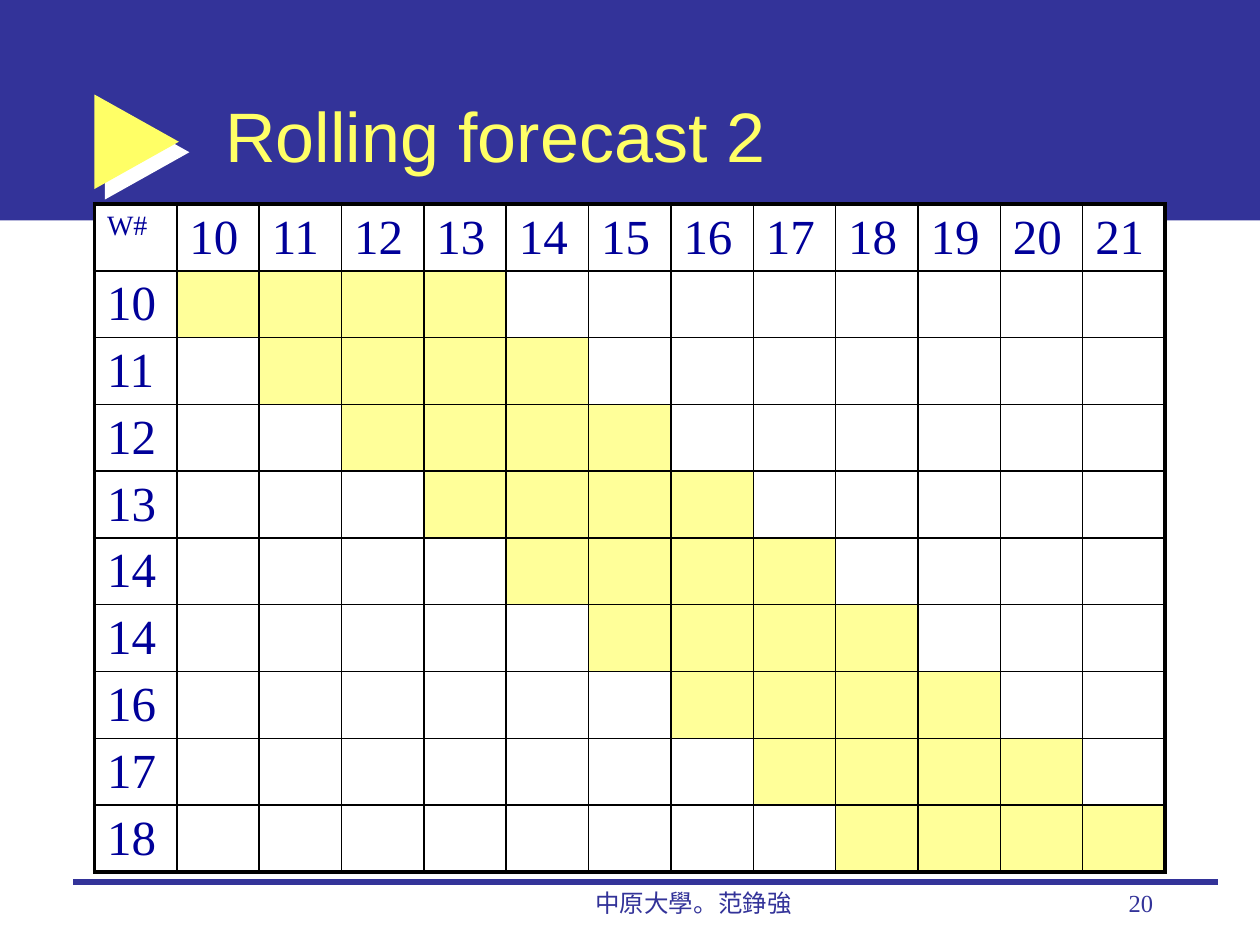
from lxml.etree import SubElement
from pptx import Presentation
from pptx.dml.color import RGBColor
from pptx.enum.shapes import MSO_CONNECTOR as CONNECTOR, MSO_SHAPE as SHAPE
from pptx.enum.text import MSO_ANCHOR as ANCHOR, PP_ALIGN as ALIGN
from pptx.oxml.ns import qn
from pptx.util import Inches, Pt

NAVY, INK, YELLOW, PALE = "333399", "000099", "FFFF66", "FFFF99"
WHITE, BLACK = "FFFFFF", "000000"

WEEKS = range(10, 22)
ROW_WEEKS = [10, 11, 12, 13, 14, 14, 16, 17, 18]
HORIZON = 4


def color(code):
    return RGBColor.from_string(code)


def write(frame, text, size, shade, font="Times New Roman", align=ALIGN.LEFT):
    para = frame.paragraphs[0]
    para.alignment = align
    span = para.add_run()
    span.text = text
    span.font.name = font
    span.font.size = Pt(size)
    span.font.color.rgb = color(shade)


def add_solid(parent, code):
    fill = SubElement(parent, qn("a:solidFill"))
    SubElement(fill, qn("a:srgbClr"), val=code)


def add_shadow(shape, code, distance, degrees):
    """Give the shape a hard-edged, opaque offset shadow."""
    effects = shape._element.spPr.find(qn("a:effectLst"))
    shadow = SubElement(effects, qn("a:outerShdw"), blurRad="0", dist=str(Pt(distance)),
                        dir=str(degrees * 60000), algn="ctr", rotWithShape="0")
    SubElement(shadow, qn("a:srgbClr"), val=code)


def add_borders(cell, widths):
    """Draw black borders; widths maps the sides L, R, T, B to points."""
    properties = cell._tc.get_or_add_tcPr()
    for side in "LRTB":
        line = SubElement(properties, qn(f"a:ln{side}"), w=str(Pt(widths[side])))
        add_solid(line, BLACK)


class SlideBuilder:
    def __init__(self, page):
        self.page = page

    def shape(self, kind, left, top, width, height, fill):
        shape = self.page.shapes.add_shape(
            kind, Inches(left), Inches(top), Inches(width), Inches(height))
        shape.shadow.inherit = False
        shape.fill.solid()
        shape.fill.fore_color.rgb = color(fill)
        shape.line.fill.background()
        return shape

    def line(self, left, right, y, shade, width):
        line = self.page.shapes.add_connector(
            CONNECTOR.STRAIGHT, Inches(left), Inches(y), Inches(right), Inches(y))
        line.line.color.rgb = color(shade)
        line.line.width = Pt(width)
        SubElement(line._element.spPr, qn("a:effectLst"))

    def text(self, left, top, width, height, text, anchor=ANCHOR.TOP, **style):
        box = self.page.shapes.add_textbox(
            Inches(left), Inches(top), Inches(width), Inches(height))
        box.text_frame.word_wrap = True
        box.text_frame.vertical_anchor = anchor
        write(box.text_frame, text, **style)

    def forecast_table(self, left, top, width, row_height):
        """Each row shades its own week and the weeks up to the horizon."""
        rows, columns = len(ROW_WEEKS) + 1, len(WEEKS) + 1
        table = self.page.shapes.add_table(
            rows, columns, Inches(left), Inches(top),
            Inches(width), Inches(row_height * rows)).table
        table.first_row = table.horz_banding = False
        for column in table.columns:
            column.width = Inches(width / columns)
        for row in range(rows):
            for column in range(columns):
                cell = table.cell(row, column)
                cell.margin_bottom = 0
                edges = {"L": column == 0, "R": column == columns - 1,
                         "T": row == 0, "B": row == rows - 1}
                add_borders(cell, {side: 2.25 if outer else 1
                                   for side, outer in edges.items()})
                shaded = 0 < row <= column < row + HORIZON
                cell.fill.solid()
                cell.fill.fore_color.rgb = color(PALE if shaded else WHITE)
        write(table.cell(0, 0).text_frame, "W#", 16, INK)
        for column, week in enumerate(WEEKS, 1):
            write(table.cell(0, column).text_frame, str(week), 28, INK)
        for row, week in enumerate(ROW_WEEKS, 1):
            write(table.cell(row, 0).text_frame, str(week), 28, INK)


def main():
    deck = Presentation()
    deck.slide_width, deck.slide_height = Inches(10), Inches(7.5)
    builder = SlideBuilder(deck.slides.add_slide(deck.slide_layouts[6]))

    builder.shape(SHAPE.RECTANGLE, 0, 0, 10, 1.75, NAVY)
    arrow = builder.shape(SHAPE.RIGHT_ARROW, 0.75, 0.75, 0.67, 0.75, YELLOW)
    arrow.adjustments[0], arrow.adjustments[1] = 0.38, 1
    add_shadow(arrow, WHITE, 8.5, 45)

    builder.line(0.58, 9.67, 7, NAVY, 3)
    builder.text(3.92, 7, 3.17, 0.5, "中原大學。范錚強", size=14, shade=NAVY, align=ALIGN.CENTER)
    builder.text(7.17, 7, 2.08, 0.5, "20", size=14, shade=NAVY, align=ALIGN.RIGHT)
    builder.text(1.69, 0.44, 7.58, 1.25, "Rolling forecast 2", anchor=ANCHOR.MIDDLE,
                 size=40, shade=YELLOW, font="Arial")
    builder.forecast_table(0.75, 1.62, 8.5, 0.53)
    deck.save("out.pptx")


if __name__ == "__main__":
    main()
